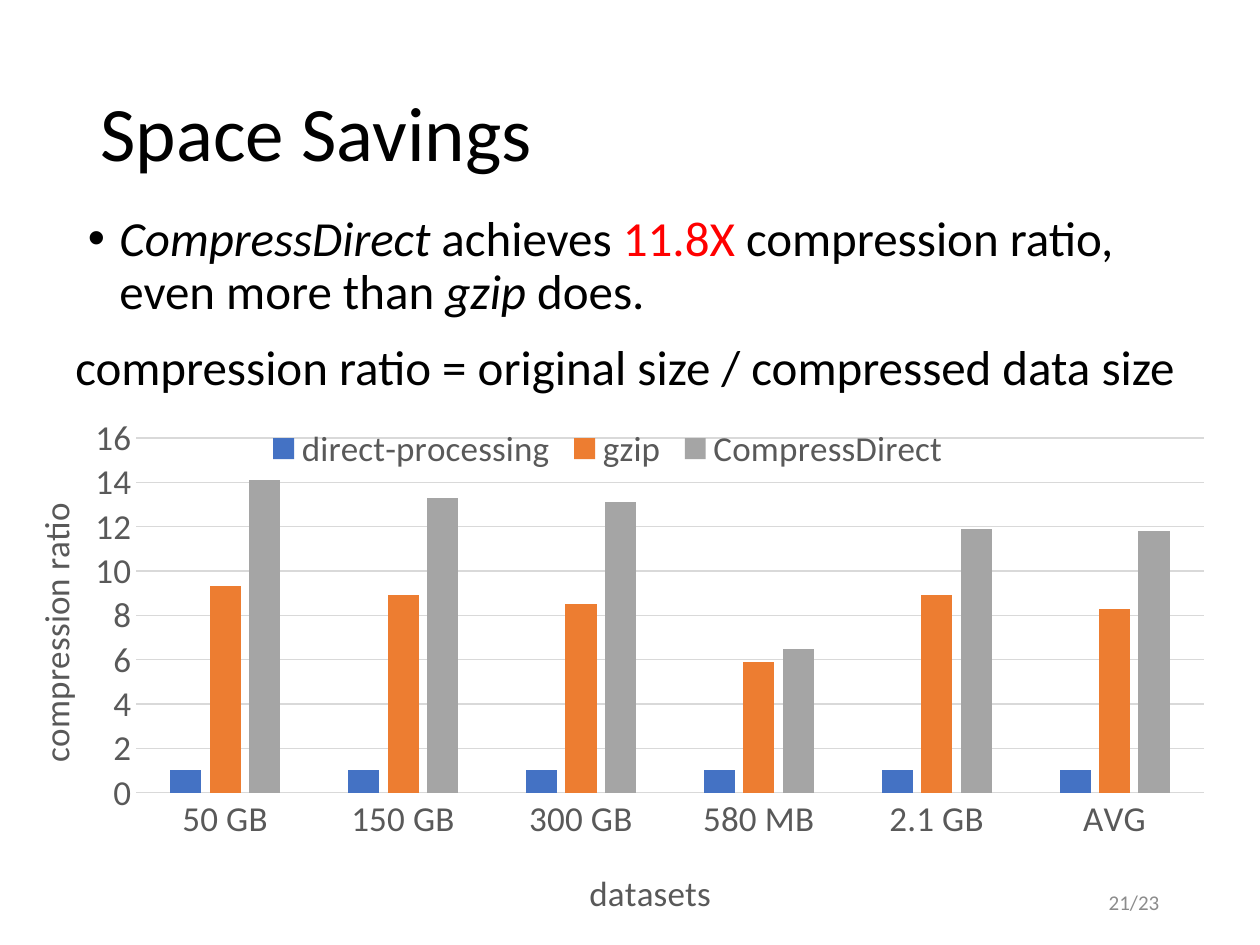
from lxml.etree import SubElement
from pptx import Presentation
from pptx.chart.data import CategoryChartData
from pptx.dml.color import RGBColor
from pptx.enum.chart import XL_CHART_TYPE, XL_LEGEND_POSITION, XL_TICK_MARK
from pptx.enum.text import MSO_ANCHOR, PP_ALIGN
from pptx.oxml import parse_xml
from pptx.oxml.ns import nsdecls, qn
from pptx.util import Inches, Pt

FONT = "Calibri"
WIDTH, HEIGHT = Inches(10), Inches(7.5)
BLACK = RGBColor(0x00, 0x00, 0x00)
RED = RGBColor(0xFF, 0x00, 0x00)
GRAY = RGBColor(0x59, 0x59, 0x59)
PALE = RGBColor(0x8C, 0x8C, 0x8C)
GRID = RGBColor(0xD9, 0xD9, 0xD9)
BLUE = RGBColor(0x44, 0x72, 0xC4)
ORANGE = RGBColor(0xED, 0x7D, 0x31)
SILVER = RGBColor(0xA5, 0xA5, 0xA5)

DATASETS = ["50 GB", "150 GB", "300 GB", "580 MB", "2.1 GB", "AVG"]
RATIOS = [
    ("direct-processing", BLUE, [1] * len(DATASETS)),
    ("gzip", ORANGE, [9.3, 8.9, 8.5, 5.9, 8.9, 8.3]),
    ("CompressDirect", SILVER, [14.1, 13.3, 13.1, 6.5, 11.9, 11.8]),
]


def share(x, y, w, h):
    """Turn shares of the slide's size into a box in EMU."""
    return int(x * WIDTH), int(y * HEIGHT), int(w * WIDTH), int(h * HEIGHT)


def style_font(font, size, color, italic=False):
    """Set the typeface, size and colour of a font."""
    font.name, font.size = FONT, Pt(size)
    font.bold, font.italic = False, italic
    font.color.rgb = color


def add_text(s, box, text, size=28, color=BLACK, align=PP_ALIGN.LEFT,
             anchor=MSO_ANCHOR.TOP, line=None, before=0, bullet=False):
    """Add a text box from a string or a list of (text, format) runs."""
    tf = s.shapes.add_textbox(*share(*box)).text_frame
    tf.word_wrap, tf.vertical_anchor = True, anchor
    p = tf.paragraphs[0]
    p.alignment, p.line_spacing, p.space_before = align, line, Pt(before)
    if bullet:
        pPr = p._p.get_or_add_pPr()
        pPr.set("marL", str(Inches(0.25)))
        pPr.set("indent", str(-Inches(0.25)))
        SubElement(pPr, qn("a:buFont")).set("typeface", "Arial")
        SubElement(pPr, qn("a:buChar")).set("char", "•")
    for words, fmt in [(text, {})] if isinstance(text, str) else text:
        r = p.add_run()
        r.text = words
        style_font(r.font, size, **{"color": color, **fmt})


def place(element, inner=False, **shares):
    """Give a chart part a manual layout in shares of the chart's size."""
    for old in element.findall(qn("c:layout")):
        element.remove(old)
    target = '<c:layoutTarget val="inner"/>' if inner else ""
    modes = "".join(f'<c:{k}Mode val="edge"/>' for k in "xy")
    values = "".join(f'<c:{k} val="{v}"/>' for k, v in shares.items())
    layout = parse_xml(
        f'<c:layout {nsdecls("c")}><c:manualLayout>{target}{modes}{values}'
        "</c:manualLayout></c:layout>")
    overlay = element.find(qn("c:overlay"))
    if overlay is None:
        element.insert(0, layout)
    else:
        overlay.addprevious(layout)


def style_axis(axis, title, x, y):
    """Style an axis and place its title."""
    axis.major_tick_mark = axis.minor_tick_mark = XL_TICK_MARK.NONE
    style_font(axis.tick_labels.font, 20, GRAY)
    tf = axis.axis_title.text_frame
    tf.text = title
    style_font(tf.paragraphs[0].runs[0].font, 20, GRAY)
    place(axis.axis_title._element, x=x, y=y)


def add_ratio_chart(s, box):
    """Add the clustered columns of compression ratios."""
    data = CategoryChartData()
    data.categories = DATASETS
    for name, _, values in RATIOS:
        data.add_series(name, values)
    chart = s.shapes.add_chart(
        XL_CHART_TYPE.COLUMN_CLUSTERED, *share(*box), data).chart
    chart.has_title = False
    style_font(chart.font, 20, BLACK)

    plot = chart.plots[0]
    plot.gap_width, plot.overlap, plot.vary_by_categories = 219, -27, False
    for series, (_, color, _) in zip(plot.series, RATIOS):
        series.format.fill.solid()
        series.format.fill.fore_color.rgb = color
    place(chart._chartSpace.chart.plotArea, inner=True,
          x=0.12, y=0.06, w=0.86, h=0.67)

    style_axis(chart.category_axis, "datasets", 0.48, 0.86)
    style_axis(chart.value_axis, "compression ratio", 0.03, 0.17)
    chart.value_axis.minimum_scale, chart.value_axis.maximum_scale = 0, 16
    chart.value_axis.major_unit = 2
    chart.value_axis.format.line.fill.background()
    for rule in (chart.category_axis, chart.value_axis.major_gridlines):
        rule.format.line.color.rgb = GRID
        rule.format.line.width = Pt(0.75)

    chart.has_legend = True
    chart.legend.position = XL_LEGEND_POSITION.TOP
    chart.legend.include_in_layout = True
    style_font(chart.legend.font, 20, GRAY)
    place(chart.legend._element, x=0.22, y=0.03, w=0.56, h=0.1)


def main():
    """Build the slide and save it."""
    prs = Presentation()
    prs.slide_width, prs.slide_height = WIDTH, HEIGHT
    s = prs.slides.add_slide(prs.slide_layouts[6])
    italic = {"italic": True}
    add_text(s, (0.07, 0.05, 0.86, 0.19), "Space Savings", size=44,
             anchor=MSO_ANCHOR.MIDDLE, line=0.9)
    add_text(s, (0.06, 0.22, 0.91, 0.63), [
        ("CompressDirect", italic), (" achieves ", {}),
        ("11.8X", {"color": RED}),
        (" compression ratio, even more than ", {}),
        ("gzip", italic), (" does.", {}),
    ], line=0.9, before=10, bullet=True)
    add_text(s, (0.05, 0.35, 0.93, 0.08),
             "compression ratio = original size / compressed data size")
    add_ratio_chart(s, (-0.01, 0.43, 0.985, 0.56))
    add_text(s, (0.71, 0.93, 0.22, 0.05), "21/23", size=12, color=PALE,
             align=PP_ALIGN.RIGHT, anchor=MSO_ANCHOR.MIDDLE)
    prs.save("out.pptx")


if __name__ == "__main__":
    main()
